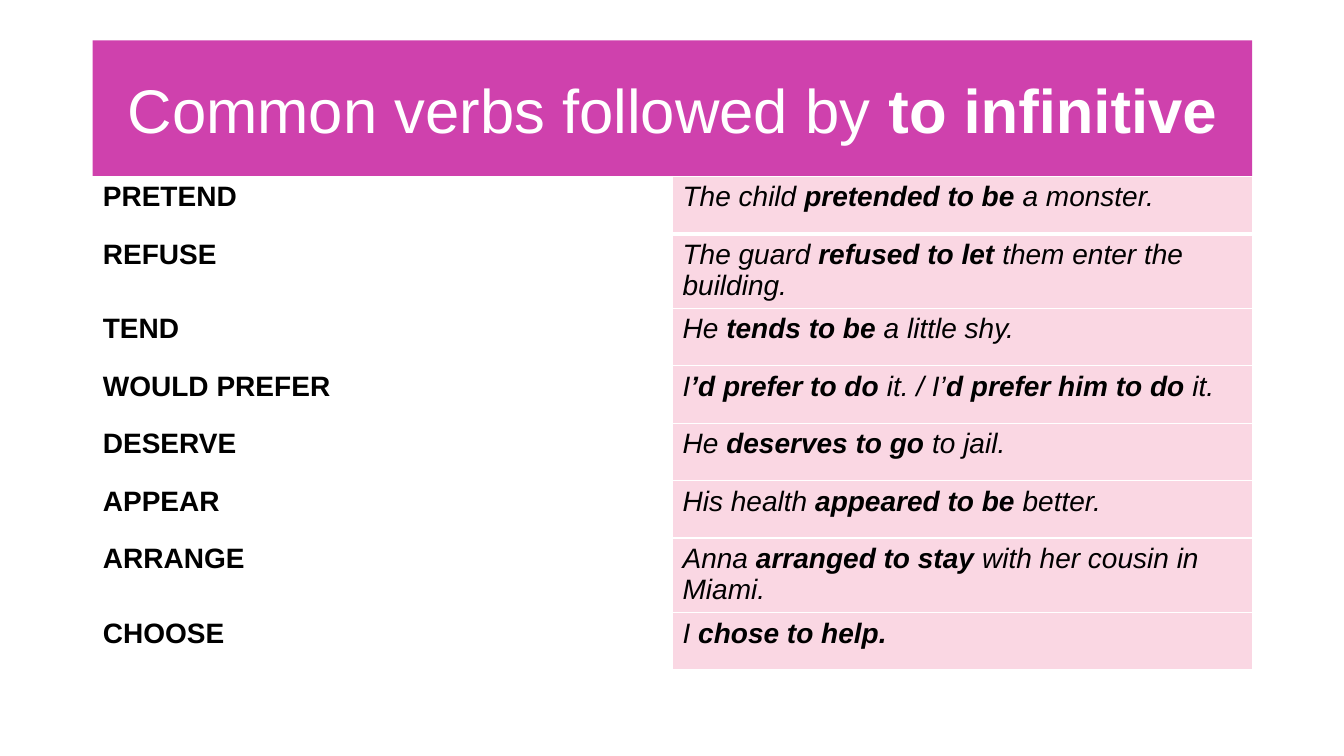
"""Build a slide listing common verbs followed by the to infinitive."""
from lxml import etree
from pptx import Presentation
from pptx.dml.color import RGBColor
from pptx.enum.shapes import MSO_SHAPE
from pptx.enum.text import MSO_ANCHOR, PP_ALIGN
from pptx.oxml.ns import qn
from pptx.util import Inches, Pt

RECTANGLE = MSO_SHAPE.RECTANGLE
MIDDLE = MSO_ANCHOR.MIDDLE
CENTER = PP_ALIGN.CENTER

HEADING = ("Common verbs followed by ", "to infinitive")
VERBS = [
    ("PRETEND", ("The child ", "pretended to be ", "a monster.")),
    ("REFUSE", ("The guard ", "refused to let ", "them enter the building.")),
    ("TEND", ("He ", "tends to be ", "a little shy.")),
    ("WOULD PREFER", ("I", "’d prefer to do ", "it. / I’", "d prefer him to do ", "it.")),
    ("DESERVE", ("He ", "deserves to go ", "to jail.")),
    ("APPEAR", ("His health ", "appeared to be ", "better.")),
    ("ARRANGE", ("Anna ", "arranged to stay ", "with her cousin in Miami.")),
    ("CHOOSE", ("I ", "chose to help.")),
]
TWO_LINE_VERBS = ("REFUSE", "ARRANGE")

WHITE, BLACK, MAGENTA, PINK = "FFFFFF", "000000", "CF41AD", "FAD7E3"
HEADING_FONT = {"name": "Arial", "size": Pt(44)}
VERB_FONT = {"name": "Arial", "size": Pt(20), "italic": False}
EXAMPLE_FONT = {"name": "Arial", "size": Pt(20), "italic": True}

LEFT, WIDTH = 0.92, 11.5
HEADING_TOP, HEADING_HEIGHT = 0.4, 1.45
TABLE_TOP = 1.75
ROW_HEIGHT, TWO_LINE_HEIGHT = 0.57, 0.74


def paint(color_format, color):
    color_format.rgb = RGBColor.from_string(color)


def fill_with(target, color):
    target.fill.solid()
    paint(target.fill.fore_color, color)


def write(paragraph, parts, font_values, color, bold=False):
    """Write parts as runs, switching bold on and off at each one."""
    for part in parts:
        run = paragraph.add_run()
        run.text = part
        run.font.bold = bold
        for attribute, value in font_values.items():
            setattr(run.font, attribute, value)
        paint(run.font.color, color)
        bold = not bold


def add_borders(cell, bottom_width):
    properties = cell._tc.get_or_add_tcPr()
    widths = {"a:lnL": 1, "a:lnR": 1, "a:lnT": 1, "a:lnB": bottom_width}
    for position, (side, width) in enumerate(widths.items()):
        line = etree.Element(qn(side), w=str(Pt(width)))
        solid = etree.SubElement(line, qn("a:solidFill"))
        etree.SubElement(solid, qn("a:srgbClr"), val=WHITE)
        properties.insert(position, line)


def add_heading(slide):
    heading = slide.shapes.add_shape(
        RECTANGLE, Inches(LEFT), Inches(HEADING_TOP), Inches(WIDTH), Inches(HEADING_HEIGHT))
    heading.shadow.inherit = False
    fill_with(heading, MAGENTA)
    heading.line.fill.background()
    frame = heading.text_frame
    frame.word_wrap = True
    frame.vertical_anchor = MIDDLE
    paragraph = frame.paragraphs[0]
    paragraph.alignment = CENTER
    paragraph.line_spacing = 0.9
    write(paragraph, HEADING, HEADING_FONT, WHITE)


def add_verb_table(slide):
    heights = [TWO_LINE_HEIGHT if verb in TWO_LINE_VERBS else ROW_HEIGHT for verb, _ in VERBS]
    table = slide.shapes.add_table(
        len(VERBS), 2, Inches(LEFT), Inches(TABLE_TOP), Inches(WIDTH), Inches(sum(heights))).table
    table.first_row = False
    table.horz_banding = False
    for row, (verb, example) in enumerate(VERBS):
        table.rows[row].height = Inches(heights[row])
        verb_cell, example_cell = table.cell(row, 0), table.cell(row, 1)
        write(verb_cell.text_frame.paragraphs[0], [verb], VERB_FONT, BLACK, bold=True)
        write(example_cell.text_frame.paragraphs[0], example, EXAMPLE_FONT, BLACK)
        for cell, color in ((verb_cell, WHITE), (example_cell, PINK)):
            fill_with(cell, color)
            add_borders(cell, 3 if row == 0 else 1)


def main():
    deck = Presentation()
    deck.slide_width, deck.slide_height = Inches(13.33), Inches(7.5)
    slide = deck.slides.add_slide(deck.slide_layouts[6])
    add_heading(slide)
    add_verb_table(slide)
    deck.save("out.pptx")


if __name__ == "__main__":
    main()
